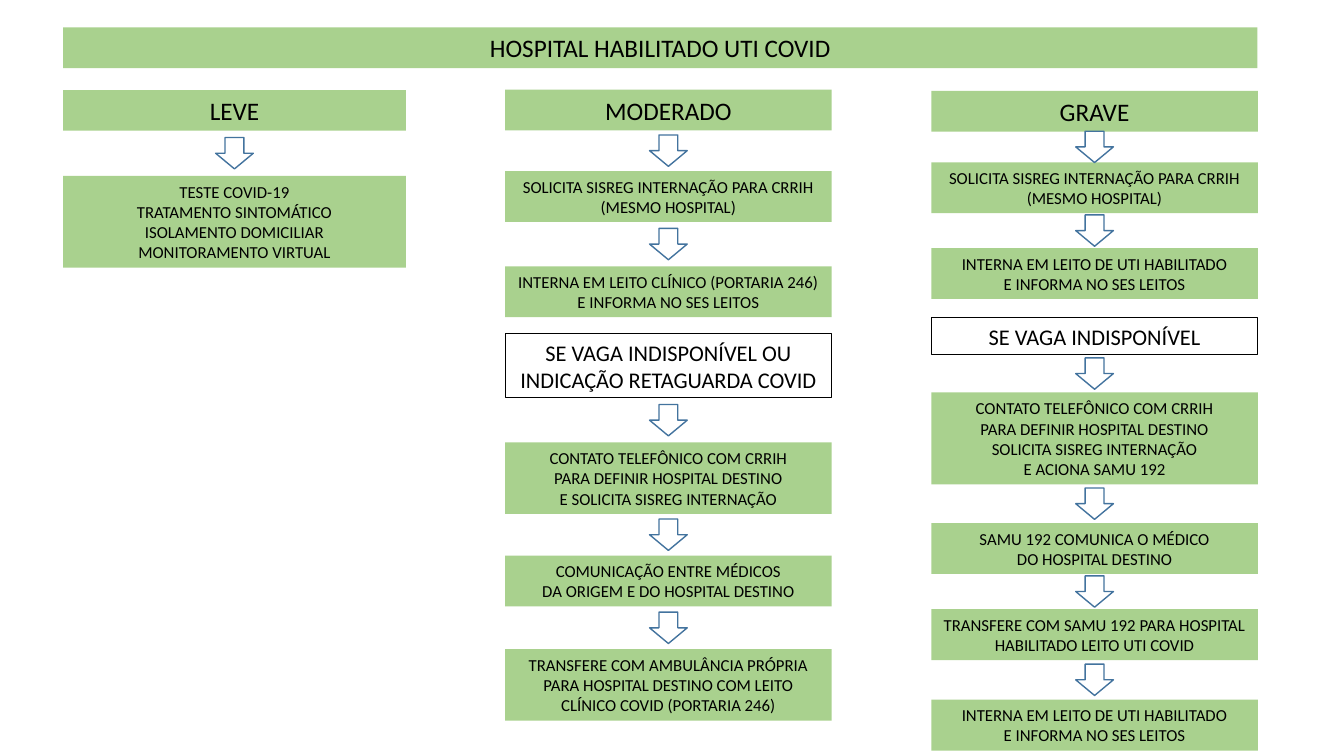
from pptx import Presentation
from pptx.dml.color import RGBColor
from pptx.enum.shapes import MSO_SHAPE
from pptx.enum.text import MSO_ANCHOR, MSO_AUTO_SIZE, PP_ALIGN
from pptx.util import Cm, Pt

RECT, DOWN_ARROW = MSO_SHAPE.RECTANGLE, MSO_SHAPE.DOWN_ARROW
MIDDLE, CENTER = MSO_ANCHOR.MIDDLE, PP_ALIGN.CENTER
GROW = MSO_AUTO_SIZE.SHAPE_TO_FIT_TEXT

GREEN, BLACK, BLUE = "A9D18E", "000000", "43739E"
FONT = "Calibri"
HEADING, CONDITION, STEP = 18, 16, 12  # text sizes in points

# Title: left, top, width in cm
TITLE = ("HOSPITAL HABILITADO UTI COVID", 1.59, 0.69, 30.1)

# Columns: left, width in cm, boxes; each box: top in cm, text size, rows, text
COLUMNS = [
    (1.59, 8.64, [
        (2.27, HEADING, 1, "LEVE"),
        (4.43, STEP, 4, "TESTE COVID-19\nTRATAMENTO SINTOMÁTICO\n"
                        "ISOLAMENTO DOMICILIAR\nMONITORAMENTO VIRTUAL"),
    ]),
    (12.73, 8.23, [
        (2.26, HEADING, 1, "MODERADO"),
        (4.31, STEP, 2, "SOLICITA SISREG INTERNAÇÃO PARA CRRIH (MESMO HOSPITAL)"),
        (6.71, STEP, 2, "INTERNA EM LEITO CLÍNICO (PORTARIA 246) "
                        "E INFORMA NO SES LEITOS"),
        (8.4, CONDITION, 2, "SE VAGA INDISPONÍVEL OU\nINDICAÇÃO RETAGUARDA COVID"),
        (11.15, STEP, 3, "CONTATO TELEFÔNICO COM CRRIH\n"
                         "PARA DEFINIR HOSPITAL DESTINO\n"
                         "E SOLICITA SISREG INTERNAÇÃO"),
        (14.0, STEP, 2, "COMUNICAÇÃO ENTRE MÉDICOS\n"
                        "DA ORIGEM E DO HOSPITAL DESTINO"),
        (16.36, STEP, 3, "TRANSFERE COM AMBULÂNCIA PRÓPRIA\n"
                         "PARA HOSPITAL DESTINO COM LEITO "
                         "CLÍNICO COVID (PORTARIA 246)"),
    ]),
    (23.47, 8.23, [
        (2.29, HEADING, 1, "GRAVE"),
        (4.09, STEP, 2, "SOLICITA SISREG INTERNAÇÃO PARA CRRIH (MESMO HOSPITAL)"),
        (6.25, STEP, 2, "INTERNA EM LEITO DE UTI HABILITADO\n"
                        "E INFORMA NO SES LEITOS"),
        (8.0, CONDITION, 1, "SE VAGA INDISPONÍVEL"),
        (9.89, STEP, 4, "CONTATO TELEFÔNICO COM CRRIH\n"
                        "PARA DEFINIR HOSPITAL DESTINO\n"
                        "SOLICITA SISREG INTERNAÇÃO\nE ACIONA SAMU 192"),
        (13.18, STEP, 2, "SAMU 192 COMUNICA O MÉDICO\nDO HOSPITAL DESTINO"),
        (15.35, STEP, 2, "TRANSFERE COM SAMU 192 PARA HOSPITAL "
                         "HABILITADO LEITO UTI COVID"),
        (17.63, STEP, 2, "INTERNA EM LEITO DE UTI HABILITADO\n"
                         "E INFORMA NO SES LEITOS"),
    ]),
]
ARROW_W, ARROW_H = Cm(0.95), Cm(0.79)


def rgb(color):
    return RGBColor.from_string(color)


def add_box(slide, left, top, width, size, rows, text):
    """Add a box as tall as its rows; conditions are outlined, the rest green."""
    height = Cm(0.25) + Pt(size * 1.22) * rows
    sp = slide.shapes.add_shape(RECT, left, top, width, height)
    sp.shadow.inherit = False
    if size == CONDITION:
        sp.fill.background()
        sp.line.color.rgb = rgb(BLACK)
        sp.line.width = Pt(0.75)
    else:
        sp.fill.solid()
        sp.fill.fore_color.rgb = rgb(GREEN)
        sp.line.fill.background()
    tf = sp.text_frame
    tf.text = text
    tf.word_wrap = True
    tf.auto_size = GROW
    tf.vertical_anchor = MIDDLE
    for p in tf.paragraphs:
        p.alignment = CENTER
        for r in p.runs:
            r.font.name = FONT
            r.font.size = Pt(size)
            r.font.color.rgb = rgb(BLACK)
    return sp


def add_arrow(slide, upper, lower):
    """Centre a down arrow in the gap between two boxes."""
    left = upper.left + (upper.width - ARROW_W) // 2
    top = (upper.top + upper.height + lower.top - ARROW_H) // 2
    sp = slide.shapes.add_shape(DOWN_ARROW, left, top, ARROW_W, ARROW_H)
    sp.shadow.inherit = False
    sp.fill.background()
    sp.line.color.rgb = rgb(BLUE)
    sp.line.width = Pt(1)


def main():
    prs = Presentation()
    prs.slide_width, prs.slide_height = Cm(33.87), Cm(19.05)
    slide = prs.slides.add_slide(prs.slide_layouts[6])

    text, left, top, width = TITLE
    add_box(slide, Cm(left), Cm(top), Cm(width), HEADING, 1, text)

    for left, width, boxes in COLUMNS:
        upper = None
        for top, size, rows, text in boxes:
            box = add_box(slide, Cm(left), Cm(top), Cm(width), size, rows, text)
            if upper is not None and size != CONDITION:
                add_arrow(slide, upper, box)
            upper = box

    prs.save("out.pptx")


if __name__ == "__main__":
    main()
